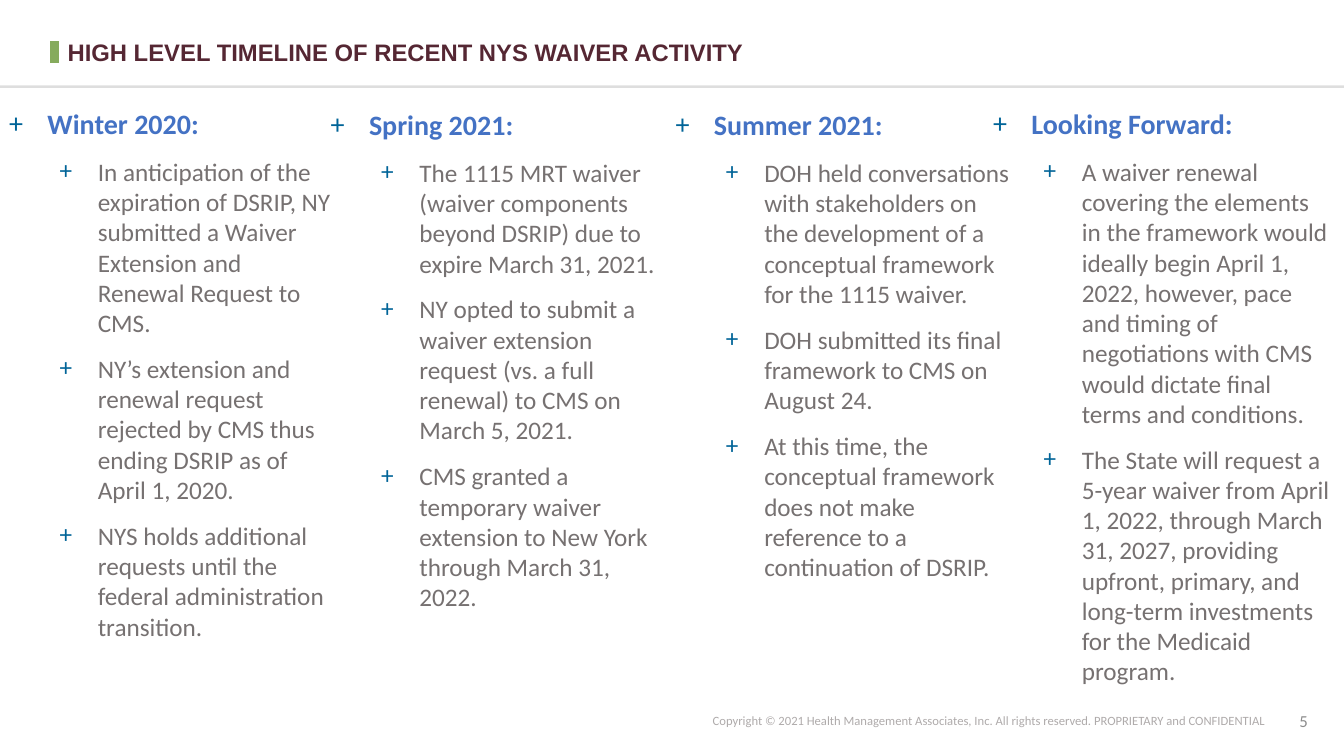
from lxml.etree import SubElement
from pptx import Presentation
from pptx.dml.color import RGBColor
from pptx.enum.shapes import MSO_CONNECTOR
from pptx.enum.text import MSO_ANCHOR, MSO_AUTO_SIZE, PP_ALIGN
from pptx.oxml.ns import qn
from pptx.util import Emu, Pt

PX = 9144
TITLE = "HIGH LEVEL TIMELINE OF RECENT NYS WAIVER ACTIVITY"
COPYRIGHT = ("Copyright © 2021 Health Management Associates, Inc. "
             "All rights reserved. PROPRIETARY and CONFIDENTIAL")
PERIODS = [
    ((-1, 101, 342, 544), "Winter 2020:", [
        "In anticipation of the expiration of DSRIP, NY submitted a Waiver "
        "Extension and Renewal Request to CMS.",
        "NY’s extension and renewal request rejected by CMS thus ending DSRIP "
        "as of April 1, 2020.",
        "NYS holds additional requests until the federal administration transition.",
    ]),
    ((318, 102, 355, 514), "Spring 2021:", [
        "The 1115 MRT waiver (waiver components beyond DSRIP) due to expire "
        "March 31, 2021.",
        "NY opted to submit a waiver extension request (vs. a full renewal) "
        "to CMS on March 5, 2021.",
        "CMS granted a temporary waiver extension to New York through March 31, 2022.",
    ]),
    ((660, 102, 355, 484), "Summer 2021:", [
        "DOH held conversations with stakeholders on the development of a "
        "conceptual framework for the 1115 waiver.",
        "DOH submitted its final framework to CMS on August 24.",
        "At this time, the conceptual framework does not make reference to a "
        "continuation of DSRIP.",
    ]),
    ((975, 101, 355, 639), "Looking Forward:", [
        "A waiver renewal covering the elements in the framework would ideally "
        "begin April 1, 2022, however, pace and timing of negotiations with CMS "
        "would dictate final terms and conditions.",
        "The State will request a 5-year waiver from April 1, 2022, through "
        "March 31, 2027, providing upfront, primary, and long-term investments "
        "for the Medicaid program.",
    ]),
]


def px(length):
    return Emu(length * PX)


def color(value):
    return RGBColor.from_string(value)


def place(shape, box, anchor=MSO_ANCHOR.TOP):
    shape.left, shape.top, shape.width, shape.height = map(px, box)
    text_frame = shape.text_frame
    text_frame.word_wrap = True
    text_frame.auto_size = MSO_AUTO_SIZE.NONE
    text_frame.vertical_anchor = anchor
    return text_frame


def format_runs(paragraph, size, value, bold=False, name="Calibri"):
    for run in paragraph.runs:
        run.font.size = Pt(size)
        run.font.name = name
        run.font.bold = bold
        run.font.color.rgb = color(value)


def add_line(slide, start, end, value, width, opacity=100):
    line = slide.shapes.add_connector(
        MSO_CONNECTOR.STRAIGHT, *map(px, start), *map(px, end))
    line.line.color.rgb = color(value)
    line.line.width = Pt(width)
    if opacity < 100:
        fill = line.line.fill._xPr.find(qn("a:solidFill"))
        SubElement(fill[0], qn("a:alpha"), val=str(opacity * 1000))
    SubElement(line._element.spPr, qn("a:effectLst"))


def add_bullet(paragraph, indent):
    properties = paragraph._p.get_or_add_pPr()
    properties.set("marL", str(px(indent)))
    properties.set("indent", str(px(-38)))
    bullet_color = SubElement(properties, qn("a:buClr"))
    SubElement(bullet_color, qn("a:srgbClr"), val="006498")
    SubElement(properties, qn("a:buFont"), typeface="Calibri")
    SubElement(properties, qn("a:buChar"), char="+")


def build_header(slide, box):
    left, top, width, height = box
    add_line(slide, (left - 3, top + 9), (left - 3, top + 31), "86AB5D", 7)
    text_frame = place(slide.shapes.title, box)
    text_frame.text = TITLE
    paragraph = text_frame.paragraphs[0]
    paragraph.alignment = PP_ALIGN.LEFT
    format_runs(paragraph, 17, "552733", True, "Arial")
    add_line(slide, (-14, top + 54), (1333, top + 54), "000000", 1.75, 12)


def build_period(placeholder, box, heading, events):
    text_frame = place(placeholder, box)
    text_frame.text = "\n".join([heading, *events])
    for index, paragraph in enumerate(text_frame.paragraphs):
        is_heading = index == 0
        paragraph.level = 0 if is_heading else 1
        add_bullet(paragraph, 38 if is_heading else 88)
        paragraph.space_before = Pt(0)
        paragraph.space_after = Pt(11.2)
        if is_heading:
            format_runs(paragraph, 20, "4472C4", True)
        else:
            format_runs(paragraph, 18, "767171")


def build_footer_text(slide, box, text, size, value, alignment, anchor):
    text_frame = place(slide.shapes.add_textbox(*map(px, box)), box, anchor)
    text_frame.text = text
    paragraph = text_frame.paragraphs[0]
    paragraph.alignment = alignment
    format_runs(paragraph, size, value)


def main():
    presentation = Presentation()
    presentation.slide_width = px(1333)
    presentation.slide_height = px(750)
    comparison_layout = presentation.slide_layouts[4]
    slide = presentation.slides.add_slide(comparison_layout)
    build_header(slide, (57, 32, 882, 39))
    for number, period in enumerate(PERIODS, 1):
        build_period(slide.placeholders[number], *period)
    build_footer_text(slide, (697, 702, 574, 25), COPYRIGHT, 9, "AFABAB",
                      PP_ALIGN.LEFT, MSO_ANCHOR.TOP)
    build_footer_text(slide, (1082, 695, 225, 40), "5", 12, "8C8C8C",
                      PP_ALIGN.RIGHT, MSO_ANCHOR.MIDDLE)
    presentation.save("out.pptx")


if __name__ == "__main__":
    main()
